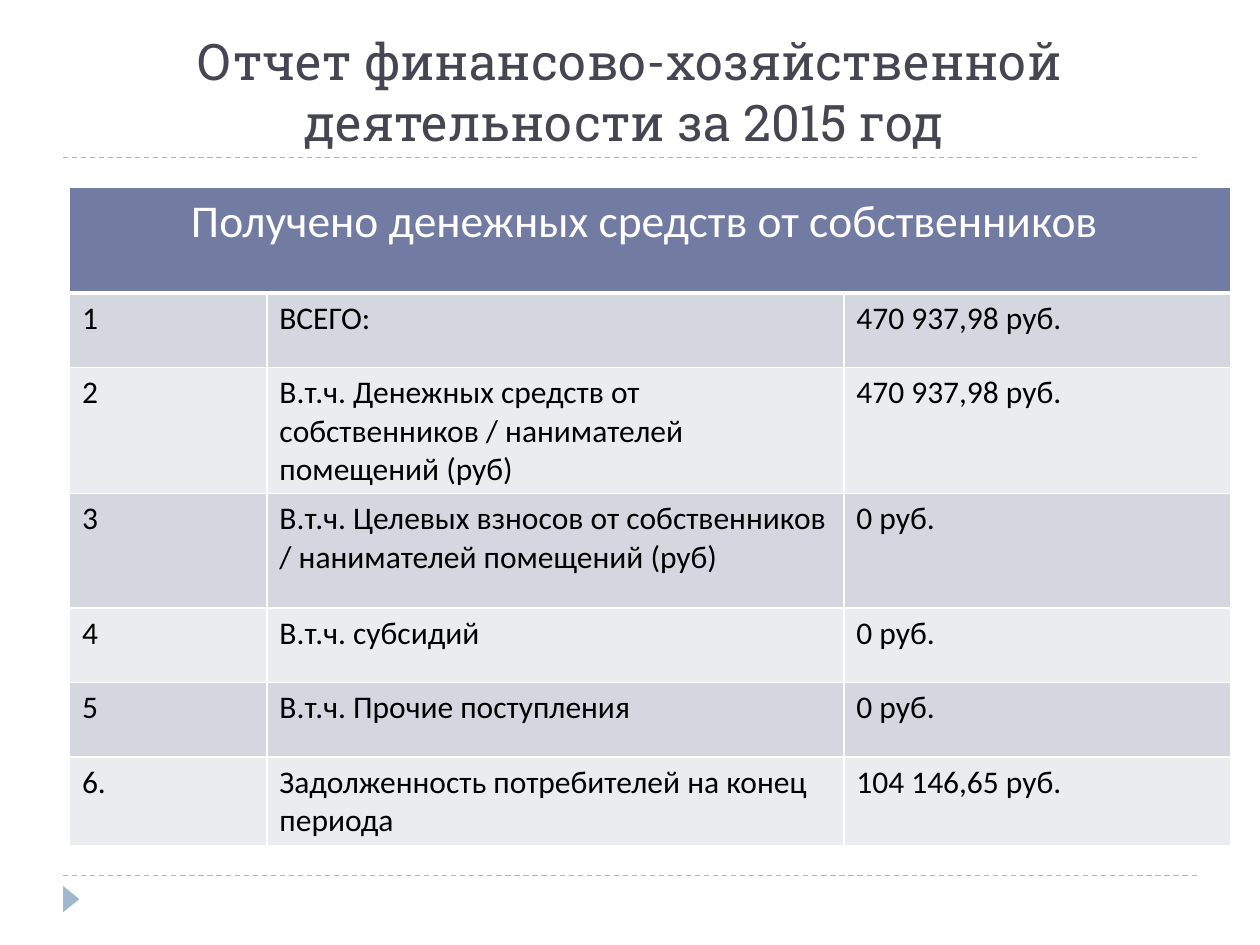
"""Build the slide with the 2015 financial report table."""
import lxml.etree
import pptx
import pptx.dml.color
import pptx.enum.dml
import pptx.enum.shapes
import pptx.enum.text
import pptx.oxml
import pptx.oxml.ns
import pptx.util
from pptx.util import Cm

COLOURS = {
    "accent": "9FB8CD",
    "title": "464653",
    "header": "727CA3",
    "odd": "D5D7E0",
    "even": "EBECF0",
    "white": "FFFFFF",
    "black": "000000",
}


def colour(name):
    return pptx.dml.color.RGBColor.from_string(COLOURS[name])


def style_cell(cell, text, size, ink, fill, bottom=1):
    cell.text = text
    cell.fill.solid()
    cell.fill.fore_color.rgb = colour(fill)
    font = cell.text_frame.paragraphs[0].font
    font.name, font.size, font.bold = "Calibri", pptx.util.Pt(size), False
    font.color.rgb = colour(ink)
    widths = {"lnL": 1, "lnR": 1, "lnT": 1, "lnB": bottom}
    for position, (side, width) in enumerate(widths.items()):
        border = pptx.oxml.parse_xml(
            f'<a:{side} {pptx.oxml.ns.nsdecls("a")} w="{pptx.util.Pt(width)}">'
            f'<a:solidFill><a:srgbClr val="{COLOURS["white"]}"/></a:solidFill></a:{side}>'
        )
        cell._tc.get_or_add_tcPr().insert(position, border)


presentation = pptx.Presentation()
presentation.slide_width, presentation.slide_height = Cm(25.4), Cm(19.05)
slide = presentation.slides.add_slide(presentation.slide_layouts[6])

for height in (17.65, 3.18):
    rule = slide.shapes.add_connector(
        pptx.enum.shapes.MSO_CONNECTOR.STRAIGHT, Cm(1.27), Cm(height), Cm(24.13), Cm(height)
    )
    rule.line.color.rgb = colour("accent")
    rule.line.width = pptx.util.Pt(0.75)
    rule.line.dash_style = pptx.enum.dml.MSO_LINE.DASH
    lxml.etree.SubElement(rule._element.spPr, pptx.oxml.ns.qn("a:effectLst"))

marker = slide.shapes.add_shape(
    pptx.enum.shapes.MSO_SHAPE.ISOSCELES_TRIANGLE, Cm(1.17), Cm(17.96), Cm(0.53), Cm(0.33)
)
marker.rotation = 90
marker.shadow.inherit = False
marker.fill.solid()
marker.fill.fore_color.rgb = colour("accent")
marker.line.fill.background()

title = slide.shapes.add_textbox(Cm(1.27), Cm(0.43), Cm(22.86), Cm(2.75)).text_frame
title.word_wrap = True
title.vertical_anchor = pptx.enum.text.MSO_ANCHOR.BOTTOM
heading = title.paragraphs[0]
heading.text = "Отчет финансово-хозяйственной деятельности за 2015 год "
heading.alignment = pptx.enum.text.PP_ALIGN.CENTER
heading.font.name, heading.font.size = "Roboto Slab", pptx.util.Pt(28.8)
heading.font.color.rgb = colour("title")

receipts = [
    ("1", "ВСЕГО:", "470 937,98 руб."),
    ("2", "В.т.ч. Денежных средств от собственников / нанимателей помещений (руб)", "470 937,98 руб."),
    ("3", "В.т.ч. Целевых взносов от собственников / нанимателей помещений (руб)", "0 руб."),
    ("4", "В.т.ч. субсидий", "0 руб."),
    ("5", "В.т.ч. Прочие поступления", "0 руб."),
    ("6.", "Задолженность потребителей на конец периода", "104 146,65 руб."),
]
column_widths = [3.98, 11.63, 7.8]
row_heights = [2.13, 1.5, 2.31, 2.31, 1.5, 1.5, 1.63]
report = slide.shapes.add_table(
    len(row_heights), len(column_widths),
    Cm(1.4), Cm(3.78), Cm(sum(column_widths)), Cm(sum(row_heights)),
).table
for column, width in zip(report.columns, column_widths):
    column.width = Cm(width)
for row, height in zip(report.rows, row_heights):
    row.height = Cm(height)

report.cell(0, 0).merge(report.cell(0, 2))
style_cell(report.cell(0, 0), "Получено денежных средств от собственников ", 26, "white", "header", 3)
report.cell(0, 0).text_frame.paragraphs[0].alignment = pptx.enum.text.PP_ALIGN.CENTER
for row_number, receipt in enumerate(receipts, 1):
    band = "odd" if row_number % 2 else "even"
    for column_number, text in enumerate(receipt):
        style_cell(report.cell(row_number, column_number), text, 18, "black", band)

presentation.save("out.pptx")
